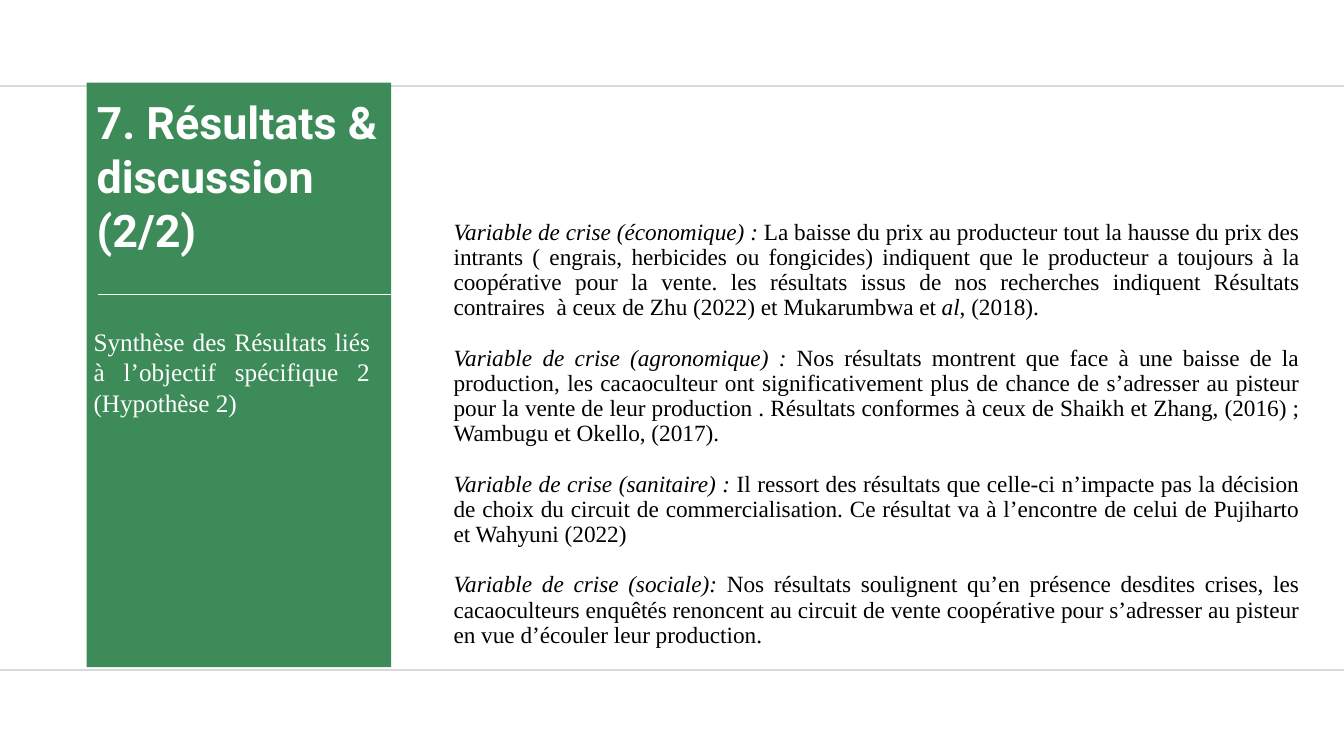
from pptx import Presentation, util as u
from pptx.dml.color import RGBColor
from pptx.enum import shapes, text
from pptx.oxml.ns import qn
from lxml import etree

# Content
TITLE = "7. Résultats & discussion (2/2)"
SUBTITLE = "Synthèse des Résultats liés à l’objectif spécifique 2 (Hypothèse 2)"
# Each paragraph alternates italic and upright runs, italic first
FINDINGS = [
    ("Variable de crise (économique) : ",
     "La baisse du prix au producteur tout la hausse du prix des intrants ( engrais, herbicides "
     "ou fongicides) indiquent que le producteur a toujours à la coopérative pour la vente. les "
     "résultats issus de nos recherches indiquent Résultats contraires  à ceux de Zhu (2022) et "
     "Mukarumbwa et ", "al", ", (2018)."),
    ("Variable de crise (agronomique) : ",
     "Nos résultats montrent que face à une baisse de la production, les cacaoculteur ont "
     "significativement plus de chance de s’adresser au pisteur pour la vente de leur production . "
     "Résultats conformes à ceux de Shaikh et Zhang, (2016) ; Wambugu et Okello, (2017)."),
    ("Variable de crise (sanitaire) : ",
     "Il ressort des résultats que celle-ci n’impacte pas la décision de choix du circuit de "
     "commercialisation. Ce résultat va à l’encontre de celui de Pujiharto et Wahyuni (2022)"),
    ("Variable de crise (sociale): ",
     "Nos résultats soulignent qu’en présence desdites crises, les cacaoculteurs enquêtés "
     "renoncent au circuit de vente coopérative pour s’adresser au pisteur en vue d’écouler "
     "leur production."),
]
COLORS = {"green": "3E8B5A", "rule": "D9D9D9", "white": "FFFFFF", "black": "000000"}
SERIF = "Times New Roman"
SLIDE_W, SLIDE_H = 13.33, 7.5
PANEL = (0.86, 0.82, 3.02, 5.8)


def rgb(name):
    return RGBColor.from_string(COLORS[name])


def add_rule(s, x1, x2, y, color, width):
    ln = s.shapes.add_connector(shapes.MSO_CONNECTOR.STRAIGHT, *map(u.Inches, (x1, y, x2, y)))
    ln.line.color.rgb = rgb(color)
    ln.line.width = u.Pt(width)
    etree.SubElement(ln._element.spPr, qn("a:effectLst"))


def add_text(s, box, paragraphs, font, size, color, bold=False, justify=False):
    tf = s.shapes.add_textbox(*map(u.Inches, box)).text_frame
    tf.word_wrap = True
    for i, runs in enumerate(paragraphs):
        p = tf.paragraphs[0] if i == 0 else tf.add_paragraph()
        p.font.name, p.font.size, p.font.bold = font, u.Pt(size), bold
        p.font.color.rgb = rgb(color)
        if justify:
            p.alignment = text.PP_ALIGN.JUSTIFY
        for j, words in enumerate(runs):
            r = p.add_run()
            r.text = words
            if len(runs) > 1:
                r.font.italic = j % 2 == 0
    return tf


prs = Presentation()
prs.slide_width, prs.slide_height = u.Inches(SLIDE_W), u.Inches(SLIDE_H)
s = prs.slides.add_slide(prs.slide_layouts[6])

# Rules across the slide
for y in (0.85, SLIDE_H - 0.85):
    add_rule(s, 0, SLIDE_W, y, "rule", 1.5)

# Green side panel
panel = s.shapes.add_shape(shapes.MSO_SHAPE.RECTANGLE, *map(u.Inches, PANEL))
panel.shadow.inherit = False
panel.fill.solid()
panel.fill.fore_color.rgb = rgb("green")
panel.line.fill.background()
add_rule(s, 0.97, PANEL[0] + PANEL[2], 2.92, "white", 0.5)
add_text(s, (0.86, 0.89, 3.27, 1.72), [(TITLE,)], "Roboto", 32, "white", bold=True)
add_text(s, (0.83, 3.19, 2.94, 1.01), [(SUBTITLE,)], SERIF, 18, "white", justify=True)

# Findings, one blank line apart
body = add_text(s, (4.4, 2.13, 8.58, 4.53), FINDINGS, SERIF, 16.6, "black", justify=True)
for p in body.paragraphs:
    p.line_spacing = u.Pt(18)
for p in body.paragraphs[:-1]:
    p.space_after = u.Pt(18)

prs.save("out.pptx")
